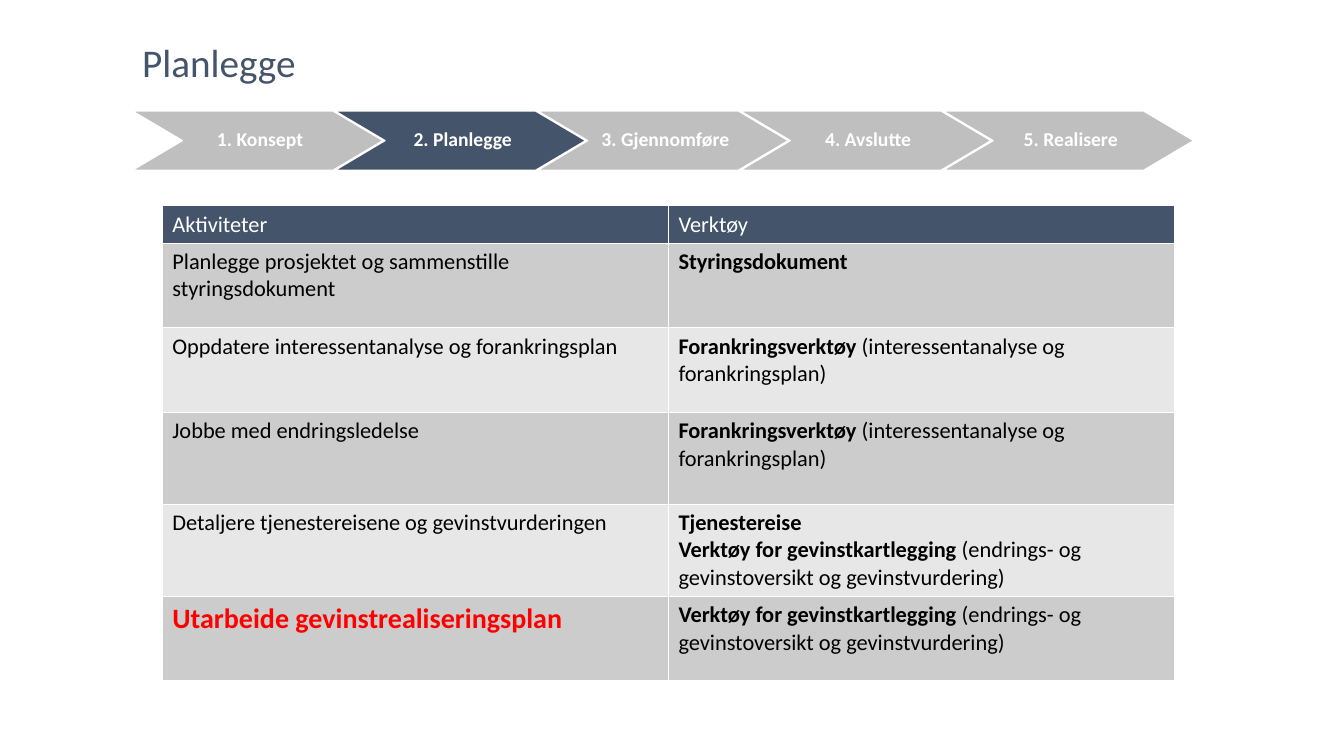
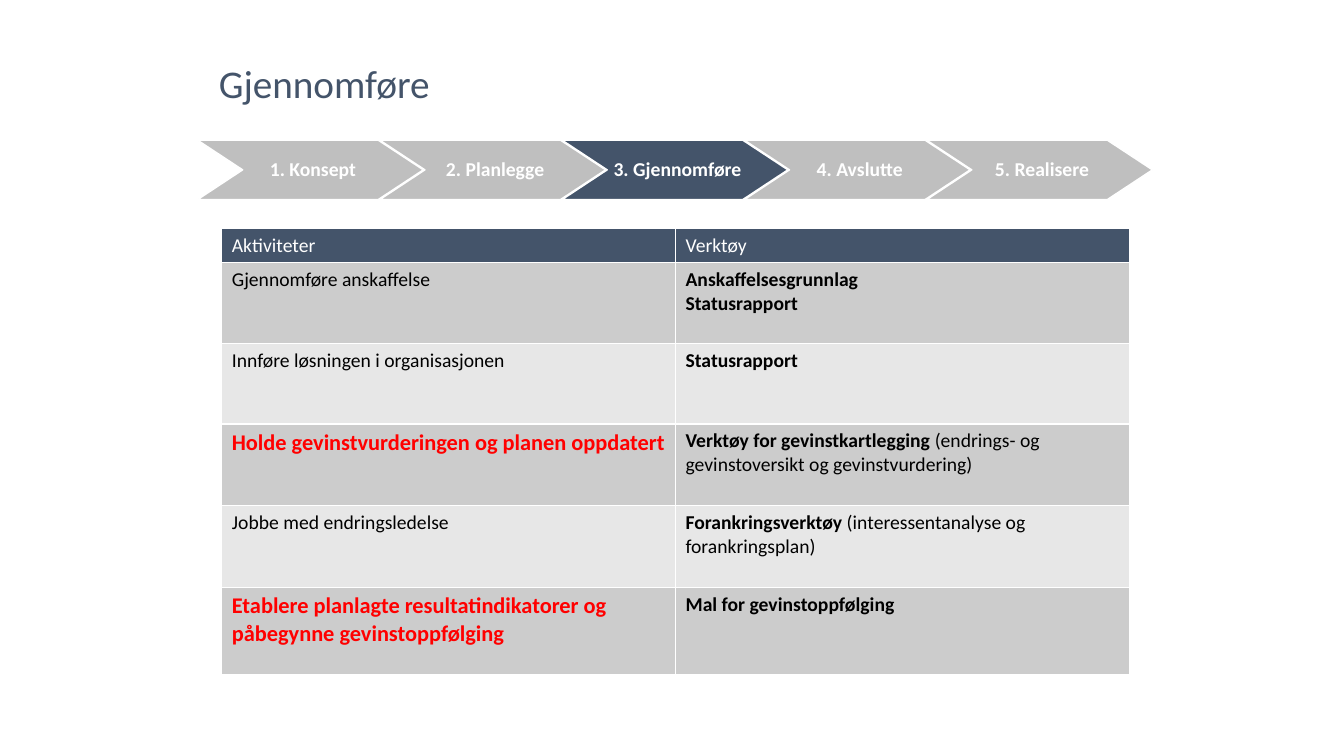
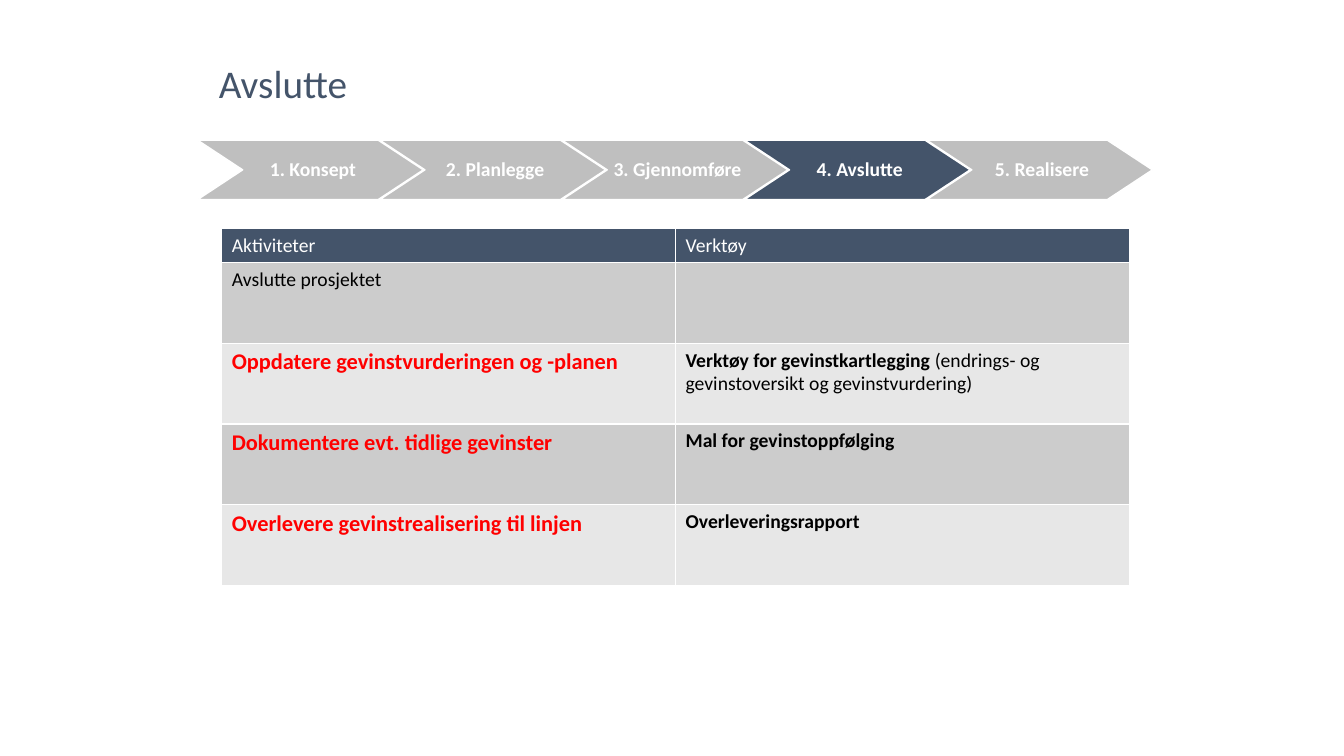
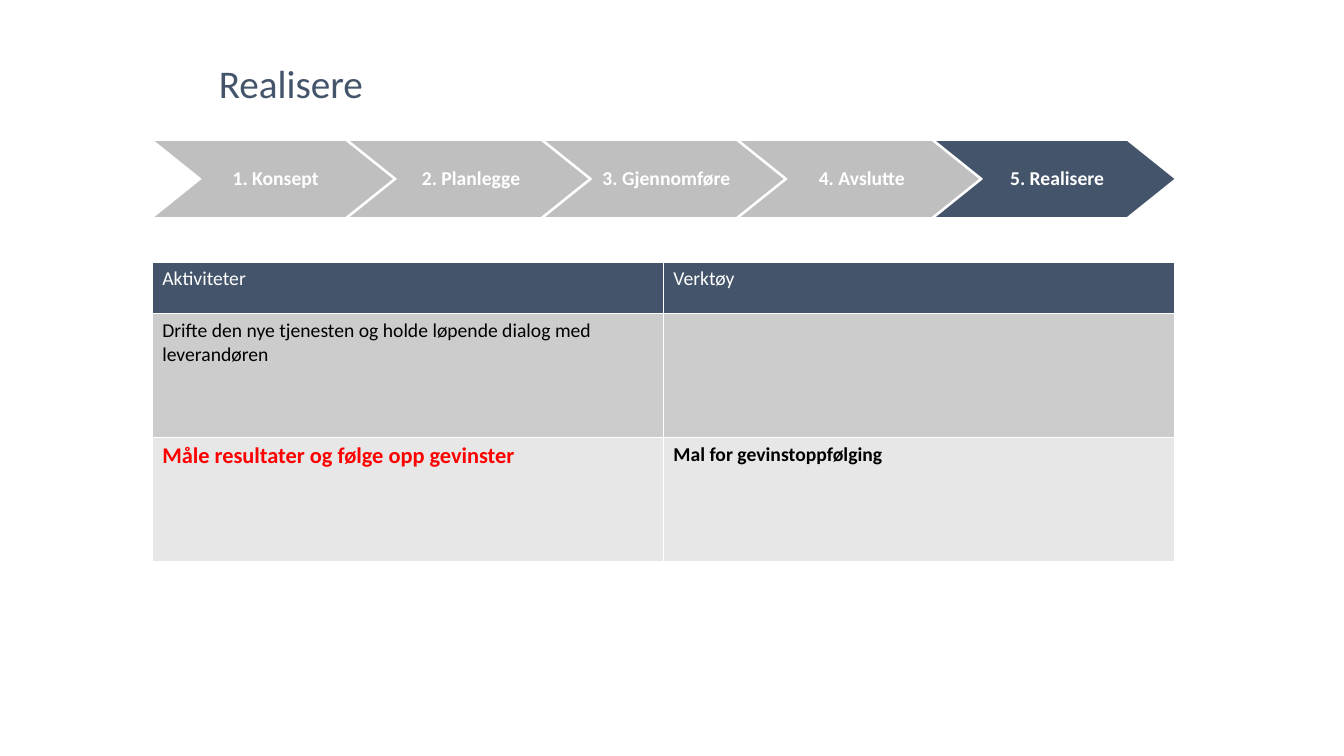
from pptx import Presentation
from pptx.dml.color import RGBColor
from pptx.enum.shapes import MSO_SHAPE
from pptx.enum.text import MSO_ANCHOR, PP_ALIGN
from pptx.util import Inches, Pt

CHEVRON = MSO_SHAPE.CHEVRON
MIDDLE = MSO_ANCHOR.MIDDLE
LEFT, CENTER = PP_ALIGN.LEFT, PP_ALIGN.CENTER

FONT = "Calibri"
NAVY, GREY, WHITE, BLACK, RED = "44546A", "BFBFBF", "FFFFFF", "000000", "FF0000"
BANDS = ("CCCCCC", "E7E7E7")
HEADS = ("Aktiviteter", "Verktøy")
STEPS = ("Konsept", "Planlegge", "Gjennomføre", "Avslutte", "Realisere")
SPAN, POINT = 4.23, 0.2

MAP = ("Verktøy for gevinstkartlegging ",
       "(endrings- og gevinstoversikt og gevinstvurdering)")
ANCHOR = ("Forankringsverktøy", " (interessentanalyse og forankringsplan)")
FOLLOW = ("Mal for gevinstoppfølging", "")
STATUS = ("Statusrapport", "")

WIDE = {"title": (1.31, 0.32, 9, 0.65), "steps": (1.31, 1.1, 10.53, 0.59)}
SLIM = {"title": (2.07, 0.53, 9, 0.65), "steps": (1.96, 1.39, 9.47, 0.59)}
TALL = {**SLIM, "steps": (1.51, 1.39, 10.15, 0.77)}

SLIDES = [
    dict(step=1, frame=WIDE, box=(1.61, 2.04, 10.04), sizes=(16, 20),
         heights=(0.37, 0.84, 0.84, 0.91, 0.91, 0.84),
         rows=[
             ("Planlegge prosjektet og sammenstille styringsdokument", False,
              [("Styringsdokument", "")]),
             ("Oppdatere interessentanalyse og forankringsplan", False, [ANCHOR]),
             ("Jobbe med endringsledelse", False, [ANCHOR]),
             ("Detaljere tjenestereisene og gevinstvurderingen", False,
              [("Tjenestereise", ""), MAP]),
             ("Utarbeide gevinstrealiseringsplan", True, [MAP]),
         ]),
    dict(step=2, frame=SLIM, box=(2.2, 2.27, 9), sizes=(14, 16),
         heights=(0.33, 0.8, 0.8, 0.81, 0.81, 0.87),
         rows=[
             ("Gjennomføre anskaffelse", False,
              [("Anskaffelsesgrunnlag", ""), STATUS]),
             ("Innføre løsningen i organisasjonen", False, [STATUS]),
             ("Holde gevinstvurderingen og planen oppdatert", True, [MAP]),
             ("Jobbe med endringsledelse", False, [ANCHOR]),
             ("Etablere planlagte resultatindikatorer og påbegynne "
              "gevinstoppfølging", True, [FOLLOW]),
         ]),
    dict(step=3, frame=SLIM, box=(2.2, 2.27, 9), sizes=(14, 16),
         heights=(0.33, 0.8, 0.8, 0.8, 0.8),
         rows=[
             ("Avslutte prosjektet", False, []),
             ("Oppdatere gevinstvurderingen og -planen", True, [MAP]),
             ("Dokumentere evt. tidlige gevinster", True, [FOLLOW]),
             ("Overlevere gevinstrealisering til linjen", True,
              [("Overleveringsrapport", "")]),
         ]),
    dict(step=4, frame=TALL, box=(1.51, 2.6, 10.14), sizes=(14, 16),
         heights=(0.51, 1.23, 1.23),
         rows=[
             ("Drifte den nye tjenesten og holde løpende dialog med "
              "leverandøren", False, []),
             ("Måle resultater og følge opp gevinster", True, [FOLLOW]),
         ]),
]


def hue(code):
    return RGBColor.from_string(code)


def paint(thing, code):
    thing.fill.solid()
    thing.fill.fore_color.rgb = hue(code)


def write(para, text, size=14, color=BLACK, bold=False):
    run = para.add_run()
    run.text = text
    font = run.font
    font.name, font.size, font.bold = FONT, Pt(size), bold
    font.color.rgb = hue(color)


def add_title(slide, box, text):
    title = slide.shapes.title
    title.left, title.top, title.width, title.height = map(Inches, box)
    title.text_frame.vertical_anchor = MIDDLE
    para = title.text_frame.paragraphs[0]
    para.alignment, para.line_spacing = LEFT, 0.9
    write(para, text, size=28, color=NAVY)


def add_steps(slide, box, active):
    left, top, total, height = box
    width = total / SPAN
    pitch = (total - width) / (len(STEPS) - 1)
    group = slide.shapes.add_group_shape()
    for i, name in enumerate(STEPS):
        arrow = group.shapes.add_shape(
            CHEVRON, Inches(left + i * pitch), Inches(top),
            Inches(width), Inches(height))
        arrow.adjustments[0] = POINT * width / height
        arrow.shadow.inherit = False
        paint(arrow, NAVY if i == active else GREY)
        arrow.line.color.rgb = hue(WHITE)
        arrow.line.width = Pt(1)
        frame = arrow.text_frame
        frame.word_wrap = False
        frame.vertical_anchor = MIDDLE
        frame.margin_left, frame.margin_right = Inches(0.05), 0
        para = frame.paragraphs[0]
        para.alignment, para.line_spacing = CENTER, 0.9
        para.space_after = Pt(4.2)
        write(para, f"{i + 1}. {name}", color=WHITE, bold=True)


def add_tools(cell, tools, size):
    frame = cell.text_frame
    for i, (name, rest) in enumerate(tools):
        para = frame.add_paragraph() if i else frame.paragraphs[0]
        write(para, name, size=size, bold=True)
        if rest:
            write(para, rest, size=size)


def add_grid(slide, box, heights, rows, sizes):
    left, top, width = box
    base, large = sizes
    grid = slide.shapes.add_table(
        len(heights), len(HEADS), Inches(left), Inches(top),
        Inches(width), Inches(sum(heights))).table
    for row, height in zip(grid.rows, heights):
        row.height = Inches(height)
    for col, head in enumerate(HEADS):
        cell = grid.cell(0, col)
        paint(cell, NAVY)
        write(cell.text_frame.paragraphs[0], head, size=base, color=WHITE)
    for i, (task, hot, tools) in enumerate(rows):
        first, last = grid.rows[i + 1].cells
        for cell in (first, last):
            paint(cell, BANDS[i % 2])
        write(first.text_frame.paragraphs[0], task, bold=hot,
              size=large if hot else base, color=RED if hot else BLACK)
        add_tools(last, tools, base)


def add_phase(deck, step, frame, box, heights, rows, sizes):
    slide = deck.slides.add_slide(deck.slide_layouts[5])
    add_title(slide, frame["title"], STEPS[step])
    add_steps(slide, frame["steps"], step)
    add_grid(slide, box, heights, rows, sizes)


def main():
    deck = Presentation()
    deck.slide_width, deck.slide_height = Inches(13.33), Inches(7.5)
    for phase in SLIDES:
        add_phase(deck, **phase)
    deck.save("out.pptx")


if __name__ == "__main__":
    main()
